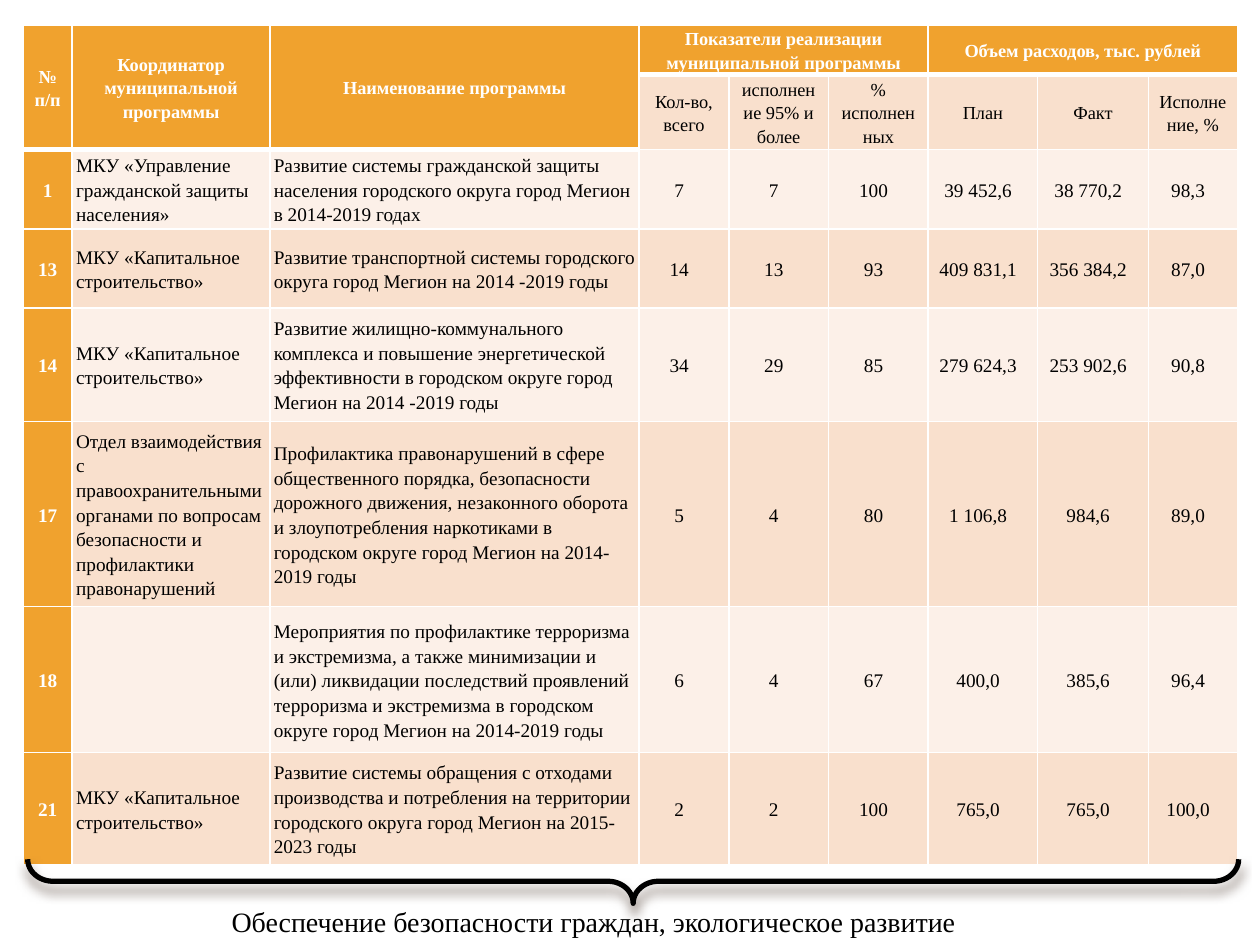
from lxml import etree
from pptx import Presentation
from pptx.dml.color import RGBColor
from pptx.enum import shapes, text
from pptx.oxml import ns
from pptx.util import Pt

COLORS = {"header": "F0A22E", "dark_band": "F9E0CD", "light_band": "FCF0E8",
          "white": "FFFFFF", "black": "000000", "shadow": "4E3B30"}
FONT = "Times New Roman"

COLUMN_WIDTHS = [28, 113, 211, 51.2, 57, 57, 62.6, 63.2, 51]
ROW_HEIGHTS = [28.4, 43, 45.2, 45.2, 64.8, 106, 83.4, 64]
GROUP_HEADINGS = ["№ п/п", "Координатор муниципальной программы", "Наименование программы",
                  "Показатели реализации муниципальной программы", "",
                  "", "Объем расходов, тыс. рублей", "", ""]
MEASURES = ["Кол-во, всего", "исполнение 95% и более", "% исполненных",
            "План", "Факт", "Исполнение, %"]
BUILDER = "МКУ «Капитальное строительство»"
PROGRAMMES = [
    ("1", "МКУ «Управление гражданской защиты населения»",
     "Развитие системы гражданской защиты населения городского округа город Мегион "
     "в 2014-2019 годах",
     "7", "7", "100", "39 452,6", "38 770,2", "98,3"),
    ("13", BUILDER,
     "Развитие транспортной системы городского округа город Мегион на 2014 -2019 годы",
     "14", "13", "93", "409 831,1", "356 384,2", "87,0"),
    ("14", BUILDER,
     "Развитие жилищно-коммунального комплекса и повышение энергетической эффективности "
     "в городском округе город Мегион на 2014 -2019 годы",
     "34", "29", "85", "279 624,3", "253 902,6", "90,8"),
    ("17", "Отдел взаимодействия с правоохранительными органами по вопросам безопасности "
     "и профилактики правонарушений",
     "Профилактика правонарушений в сфере общественного порядка, безопасности дорожного "
     "движения, незаконного оборота и злоупотребления наркотиками в городском округе "
     "город Мегион на 2014-2019 годы",
     "5", "4", "80", "1 106,8", "984,6", "89,0"),
    ("18", "",
     "Мероприятия по профилактике терроризма и экстремизма, а также минимизации и (или) "
     "ликвидации последствий проявлений терроризма и экстремизма в городском округе "
     "город Мегион на 2014-2019 годы",
     "6", "4", "67", "400,0", "385,6", "96,4"),
    ("21", BUILDER,
     "Развитие системы обращения с отходами производства и потребления на территории "
     "городского округа город Мегион на 2015- 2023 годы",
     "2", "2", "100", "765,0", "765,0", "100,0"),
]


def rgb(name):
    return RGBColor.from_string(COLORS[name])


def add_run(paragraph, wording, size, color="black", bold=False):
    run = paragraph.add_run()
    run.text = wording
    run.font.name, run.font.size, run.font.bold = FONT, Pt(size), bold
    run.font.color.rgb = rgb(color)


def add_element(parent, tag, **attributes):
    return etree.SubElement(parent, ns.qn(tag), attributes)


def set_borders(cell, bottom):
    """Draw white cell borders, 1 pt except at the bottom."""
    properties = cell._tc.get_or_add_tcPr()
    for place, (side, width) in enumerate([("L", 1), ("R", 1), ("T", 1), ("B", bottom)]):
        line = add_element(properties, f"a:ln{side}", w=str(Pt(width)))
        fill = add_element(line, "a:solidFill")
        add_element(fill, "a:srgbClr", val=COLORS["white"])
        properties.insert(place, line)


def fill_cell(cell, wording, fill, size, color="black", bold=False, centred=True,
              margins=(2.2, 2.2), bottom=1):
    cell.fill.solid()
    cell.fill.fore_color.rgb = rgb(fill)
    set_borders(cell, bottom)
    cell.vertical_anchor = text.MSO_ANCHOR.MIDDLE
    cell.margin_left, cell.margin_right = map(Pt, margins)
    cell.margin_top = cell.margin_bottom = Pt(0)
    paragraph = cell.text_frame.paragraphs[0]
    paragraph.line_spacing = 1.15
    paragraph.alignment = text.PP_ALIGN.CENTER if centred else text.PP_ALIGN.LEFT
    if wording:
        add_run(paragraph, wording, size, color, bold)


def add_headings(table):
    heading = {"size": 10.5, "margins": (5, 5)}
    for column, wording in enumerate(GROUP_HEADINGS):
        fill_cell(table.cell(0, column), wording, "header", color="white", bold=True,
                  bottom=3, **heading)
        if column < 3:
            fill_cell(table.cell(1, column), "", "header", bottom=3, **heading)
            table.cell(0, column).merge(table.cell(1, column))
        else:
            fill_cell(table.cell(1, column), MEASURES[column - 3], "dark_band", **heading)
    for first in (3, 6):
        table.cell(0, first).merge(table.cell(0, first + 2))


def add_programme_table(slide, left, top, width, height):
    table = slide.shapes.add_table(len(ROW_HEIGHTS), len(COLUMN_WIDTHS), Pt(left), Pt(top),
                                   Pt(width), Pt(height)).table
    table.horz_banding = False
    for column, column_width in zip(table.columns, COLUMN_WIDTHS):
        column.width = Pt(column_width)
    for row, row_height in zip(table.rows, ROW_HEIGHTS):
        row.height = Pt(row_height)
    add_headings(table)
    for row, programme in enumerate(PROGRAMMES, 2):
        band = "dark_band" if row % 2 else "light_band"
        for column, wording in enumerate(programme):
            cell = table.cell(row, column)
            if column == 0:
                fill_cell(cell, wording, "header", 11, "white", bold=True)
            elif column < 3:
                fill_cell(cell, wording, band, 11, centred=False)
            else:
                fill_cell(cell, wording, band, 11, margins=(2.2, 7.7))


def add_brace(slide, left, top, width, height):
    """Place a brace that opens upwards and fills the given box."""
    brace = slide.shapes.add_shape(
        shapes.MSO_SHAPE.RIGHT_BRACE, Pt(left + (width - height) / 2),
        Pt(top + (height - width) / 2), Pt(height), Pt(width))
    brace.rotation = 90
    brace.adjustments[0], brace.adjustments[1] = 0.57, 0.5
    brace.fill.background()
    brace.line.color.rgb = rgb("black")
    brace.line.width = Pt(3)
    brace.shadow.inherit = False
    effects = brace._element.spPr.find(ns.qn("a:effectLst"))
    shadow = add_element(effects, "a:outerShdw", blurRad=str(Pt(6)), dist=str(Pt(4)),
                         dir="5400000", rotWithShape="0")
    color = add_element(shadow, "a:srgbClr", val=COLORS["shadow"])
    add_element(color, "a:alpha", val="60000")


def add_caption(slide, left, top, width, height):
    frame = slide.shapes.add_textbox(Pt(left), Pt(top), Pt(width), Pt(height)).text_frame
    frame.word_wrap = True
    frame.auto_size = text.MSO_AUTO_SIZE.SHAPE_TO_FIT_TEXT
    add_run(frame.paragraphs[0],
            "Обеспечение безопасности граждан, экологическое развитие", 16)


def main():
    deck = Presentation()
    deck.slide_width, deck.slide_height = Pt(720), Pt(540)
    slide = deck.slides.add_slide(deck.slide_layouts[6])
    add_programme_table(slide, 13.3, 14.2, sum(COLUMN_WIDTHS), sum(ROW_HEIGHTS))
    add_brace(slide, 15.8, 491, 692, 25.2)
    add_caption(slide, 125.3, 513.4, 720, 26.6)
    deck.save("out.pptx")


if __name__ == "__main__":
    main()
